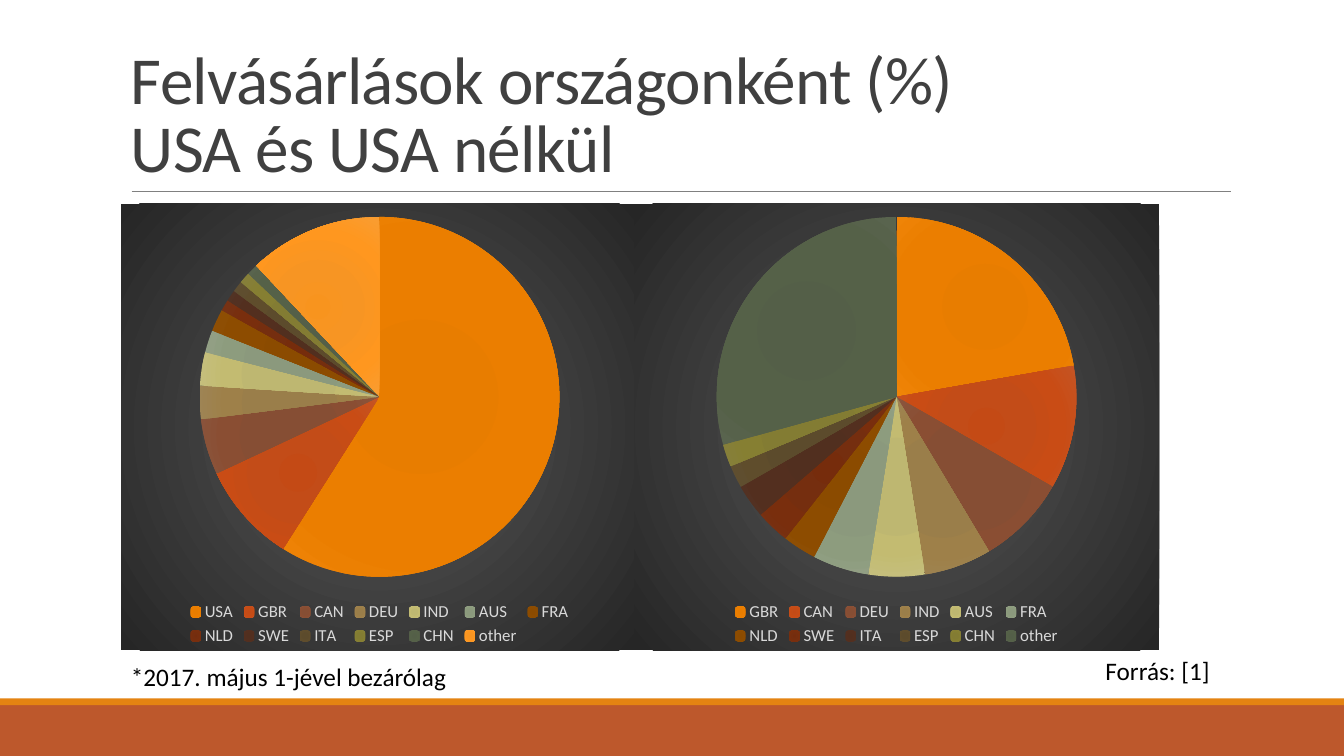
from dataclasses import dataclass

from pptx import Presentation
from pptx.chart.data import CategoryChartData
from pptx.dml.color import RGBColor
from pptx.enum.chart import XL_CHART_TYPE, XL_LEGEND_POSITION
from pptx.enum.shapes import MSO_CONNECTOR, MSO_SHAPE
from pptx.enum.text import MSO_ANCHOR, MSO_AUTO_SIZE
from pptx.oxml import parse_xml
from pptx.oxml.ns import nsdecls, qn
from pptx.util import Cm, Pt


@dataclass(frozen=True)
class Theme:
    font: str = "Calibri"
    head: str = "404040"
    ink: str = "000000"
    rule: str = "808080"
    band: str = "BD582C"
    strip: str = "E48312"
    key: str = "D9D9D9"
    head_size: int = 48
    note_size: int = 18
    key_size: int = 12
    panel: tuple = ("595959", "262626")
    slices: tuple = (
        ("E57B00", "E87D00", "EB7E00", "EF8407"),
        ("C44A15", "C34C18", "C94C15", "C45525"),
        ("874C32", "864E34", "8A4E33", "8A553D"),
        ("9A7D48", "9A7E4A", "9E8049", "9E8454"),
        ("BEB76E", "BEB771", "C3BB71", "C5BF7D"),
        ("8A987B", "8B997D", "8D9C7E", "94A187"),
        ("8A4A00", "8B4B00", "8D4C00", "8F4F05"),
        ("762C0C", "752E0F", "792E0D", "763316"),
        ("512E1E", "512F1F", "532F1F", "523324"),
        ("5C4B2B", "5C4B2C", "5F4D2C", "5F4F32"),
        ("837C31", "837C33", "867F32", "867F3B"),
        ("535F47", "545F48", "556148", "59644E"),
        ("F8941E", "F79523", "FF971F", "F99D32"),
    )


THEME = Theme()
WIDTH, HEIGHT = 33.87, 19.05
PIE = 9.07
LANDS = ["GBR", "CAN", "DEU", "IND", "AUS", "FRA",
         "NLD", "SWE", "ITA", "ESP", "CHN", "other"]
WITH_USA = [59, 9, 5, 3, 3, 2, 2, 1, 1, 1, 1, 1, 12]
NO_USA = [22, 11, 8, 6, 5, 5, 3, 3, 3, 2, 2, 29]


def place(box):
    return [Cm(side) for side in box]


def style(font, size, color):
    font.name = THEME.font
    font.size = Pt(size)
    font.color.rgb = RGBColor.from_string(color)


def radial(colors, marks, focus):
    stops = "".join(
        f'<a:gs pos="{mark * 1000}"><a:srgbClr val="{color}"/></a:gs>'
        for mark, color in zip(marks, colors))
    edge = focus * 1000
    return (f'<a:gradFill {nsdecls("a")} rotWithShape="1"><a:gsLst>{stops}</a:gsLst>'
            f'<a:path path="circle"><a:fillToRect l="{edge}" t="{edge}" '
            f'r="{edge}" b="{edge}"/></a:path></a:gradFill>')


def add_bar(slide, box, color):
    bar = slide.shapes.add_shape(MSO_SHAPE.RECTANGLE, *place(box))
    bar.shadow.inherit = False
    bar.fill.solid()
    bar.fill.fore_color.rgb = RGBColor.from_string(color)
    bar.line.fill.background()


def add_base(slide, box):
    left, top, width, height = box
    strip = 0.17
    add_bar(slide, (left, top + strip, width, height - strip), THEME.band)
    add_bar(slide, (left, top, width, strip), THEME.strip)


def add_text(slide, box, lines, size, color):
    frame = slide.shapes.add_textbox(*place(box)).text_frame
    frame.word_wrap = True
    para = frame.paragraphs[0]
    for index, line in enumerate(lines):
        if index:
            para.add_line_break()
        run = para.add_run()
        run.text = line
        style(run.font, size, color)
    return frame


def add_title(slide, box):
    left, top, width, height = box
    lines = ["Felvásárlások országonként (%)", "USA és USA nélkül"]
    frame = add_text(slide, box, lines, THEME.head_size, THEME.head)
    frame.vertical_anchor = MSO_ANCHOR.BOTTOM
    para = frame.paragraphs[0]
    para.line_spacing = 0.85
    for run in para.runs:
        run.font._element.set("spc", "-50")
    base = Cm(top + height)
    start = Cm(left + 0.27)
    rule = slide.shapes.add_connector(
        MSO_CONNECTOR.STRAIGHT, start, base, start + Cm(27.69), base)
    rule.line.color.rgb = RGBColor.from_string(THEME.rule)
    rule.line.width = Pt(0.5)
    rule._element.spPr.append(parse_xml(f'<a:effectLst {nsdecls("a")}/>'))


def add_note(slide, box, text):
    frame = add_text(slide, box, [text], THEME.note_size, THEME.ink)
    frame.auto_size = MSO_AUTO_SIZE.SHAPE_TO_FIT_TEXT


def add_pie(slide, box, lands, values):
    data = CategoryChartData()
    data.categories = lands
    data.add_series("Series 1", values)
    chart = slide.shapes.add_chart(XL_CHART_TYPE.PIE, *place(box), data).chart
    style(chart.font, 10, THEME.ink)
    chart.has_title = False
    chart.has_legend = True
    chart.legend.position = XL_LEGEND_POSITION.BOTTOM
    chart.legend.include_in_layout = False
    style(chart.legend.font, THEME.key_size, THEME.key)
    plot = chart.plots[0]
    plot.vary_by_categories = True
    for index in range(len(values)):
        look = plot.series[0].points[index].format
        look.fill.solid()
        look.line.fill.background()
    space = chart._chartSpace
    for part, colors in zip(space.xpath(".//c:dPt/c:spPr"), THEME.slices):
        part.replace(part[0], parse_xml(radial(colors, (0, 34, 70, 100), 100)))
    panel = radial(THEME.panel, (0, 100), 50)
    space.find(qn("c:chart")).addnext(parse_xml(
        f'<c:spPr {nsdecls("c", "a")}>{panel}<a:ln><a:noFill/></a:ln></c:spPr>'))
    fit_pie(space, box)


def fit_pie(space, box):
    wide, high = PIE / box[2], PIE / box[3]
    sides = {"x": (1 - wide) / 2, "y": 0.03, "w": wide, "h": high}
    parts = "".join(f'<c:{name} val="{side:.3f}"/>' for name, side in sides.items())
    area = space.xpath("c:chart/c:plotArea")[0]
    for old in area.findall(qn("c:layout")):
        area.remove(old)
    area.insert(0, parse_xml(
        f'<c:layout {nsdecls("c")}><c:manualLayout><c:layoutTarget val="inner"/>'
        f'<c:xMode val="edge"/><c:yMode val="edge"/>{parts}'
        f'</c:manualLayout></c:layout>'))


def main():
    deck = Presentation()
    deck.slide_width, deck.slide_height = Cm(WIDTH), Cm(HEIGHT)
    slide = deck.slides.add_slide(deck.slide_layouts[6])
    add_base(slide, (0, 17.6, WIDTH, HEIGHT - 17.6))
    add_title(slide, (3.05, 0.79, 27.94, 4.04))
    add_note(slide, (27.61, 16.38, 6.73, 1.02), "Forrás: [1]")
    add_note(slide, (3.05, 16.54, 13.97, 1.02), "*2017. május 1-jével bezárólag")
    add_pie(slide, (3.05, 5.13, 13.03, 11.25), ["USA"] + LANDS, WITH_USA)
    add_pie(slide, (15.98, 5.13, 13.23, 11.25), LANDS, NO_USA)
    deck.save("out.pptx")


if __name__ == "__main__":
    main()
